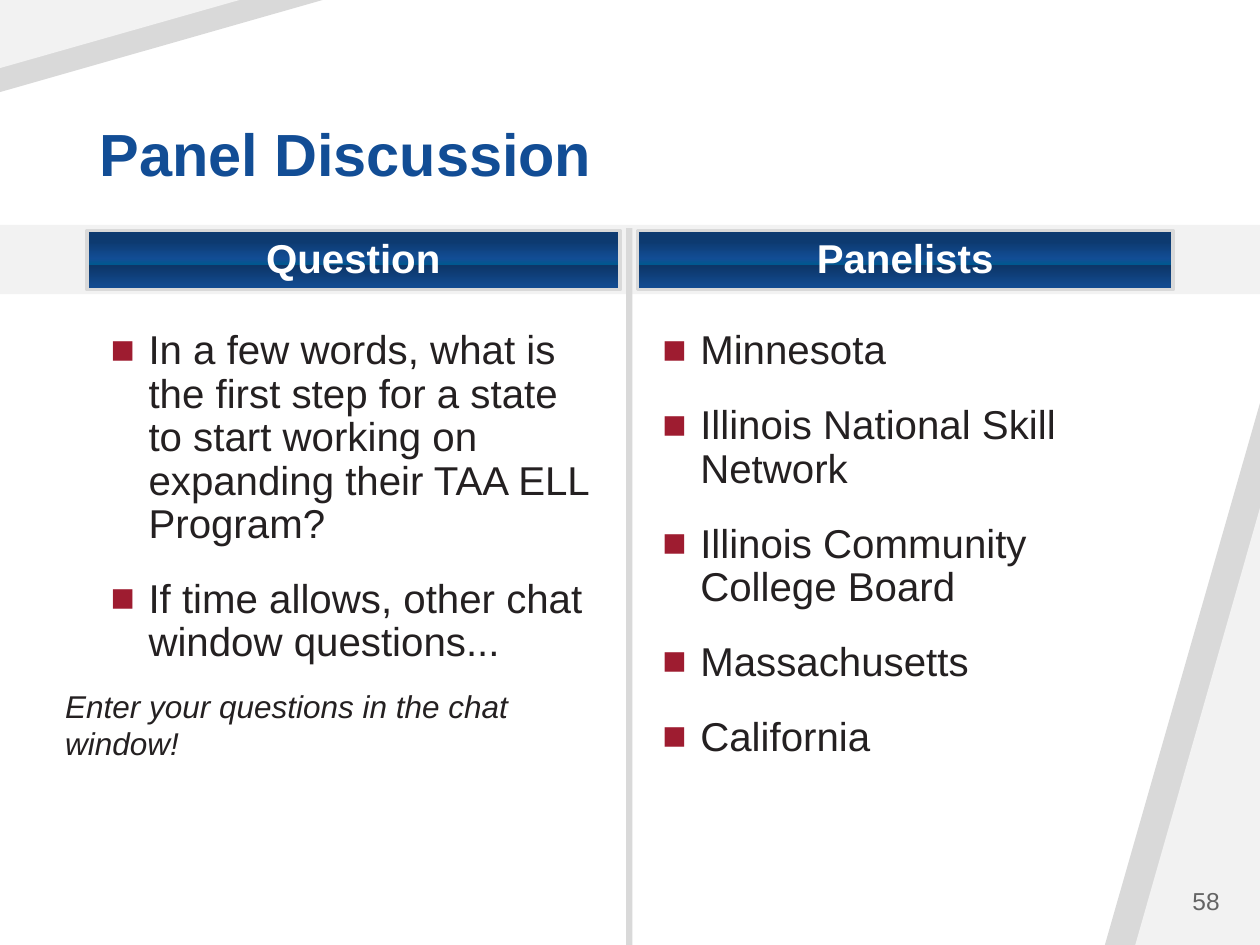
from dataclasses import dataclass
from typing import NamedTuple

from lxml import etree
from pptx import Presentation
from pptx.dml.color import RGBColor
from pptx.enum import shapes, text
from pptx.oxml import ns
from pptx.util import Pt


@dataclass(frozen=True)
class Theme:
    font: str = "Arial"
    blue: str = "124D95"
    ink: str = "242021"
    white: str = "FFFFFF"
    bullet: str = "9E1C30"
    stripe: str = "D9D9D9"
    pale: str = "F2F2F2"
    number: str = "646464"
    title_size: float = 34
    body_size: float = 23
    note_size: float = 18
    number_size: float = 14
    gradient: tuple = ((19, "0D3A70"), (47, "124D95"), (58, "00588F"),
                       (59, "0D3668"), (100, "124D95"))


class Box(NamedTuple):
    left: float
    top: float
    width: float
    height: float

    def lengths(self) -> list:
        return [Pt(value) for value in self]


class Decor(NamedTuple):
    geometry: shapes.MSO_SHAPE
    box: Box
    color: str
    rotation: float = 0


class Column(NamedTuple):
    heading: str
    heading_box: Box
    points_box: Box
    points: tuple


THEME = Theme()
TRIANGLE = shapes.MSO_SHAPE.ISOSCELES_TRIANGLE
RECTANGLE = shapes.MSO_SHAPE.RECTANGLE
INDENT = Pt(21.6)

DECORATION = (
    Decor(TRIANGLE, Box(631.4, 230.4, 88.6, 309.6), THEME.stripe),
    Decor(TRIANGLE, Box(648.7, 290.2, 71.3, 249.8), THEME.pale),
    Decor(TRIANGLE, Box(0, 0, 184.3, 52.6), THEME.stripe, 180),
    Decor(TRIANGLE, Box(0, 0, 136.8, 38.9), THEME.pale, 180),
    Decor(RECTANGLE, Box(0, 128.5, 720, 39.6), THEME.pale),
    Decor(RECTANGLE, Box(357.8, 130.3, 3.6, 409.7), THEME.stripe),
)

COLUMNS = (
    Column("Question", Box(49.7, 131.8, 304.6, 33.8), Box(56.2, 185, 295.2, 302.4), (
        "In a few words, what is the first step for a state to start working on "
        "expanding their TAA ELL Program?",
        "If time allows, other chat window questions...",
    )),
    Column("Panelists", Box(364.3, 131.8, 306, 33.8), Box(371.5, 185, 295.2, 302.4), (
        "Minnesota",
        "Illinois National Skill Network",
        "Illinois Community College Board",
        "Massachusetts",
        "California",
    )),
)


def apply(target, values: dict) -> None:
    for key, value in values.items():
        setattr(target, key, value)


def write(paragraph, words: str, size: float, color: str, **style) -> None:
    run = paragraph.add_run()
    run.text = words
    apply(run.font, {"name": THEME.font, "size": Pt(size), **style})
    run.font.color.rgb = RGBColor.from_string(color)


def add_panel(slide, geometry, box: Box):
    panel = slide.shapes.add_shape(geometry, *box.lengths())
    panel.shadow.inherit = False
    return panel


def add_decor(slide, decor: Decor) -> None:
    panel = add_panel(slide, decor.geometry, decor.box)
    panel.fill.solid()
    panel.fill.fore_color.rgb = RGBColor.from_string(decor.color)
    panel.line.fill.background()
    panel.rotation = decor.rotation
    if decor.geometry == TRIANGLE:
        panel.adjustments[0] = 1


def fill_gradient(panel) -> None:
    panel.fill.gradient()
    panel.fill.gradient_angle = 270
    stops = panel.element.spPr.find(".//" + ns.qn("a:gsLst"))
    for stop in list(stops):
        stops.remove(stop)
    for percent, color in THEME.gradient:
        stop = etree.SubElement(stops, ns.qn("a:gs"), pos=str(percent * 1000))
        etree.SubElement(stop, ns.qn("a:srgbClr"), val=color)


def add_heading(slide, heading: str, box: Box) -> None:
    panel = add_panel(slide, RECTANGLE, box)
    fill_gradient(panel)
    panel.line.color.rgb = RGBColor.from_string(THEME.stripe)
    panel.line.width = Pt(2)
    apply(panel.text_frame, {
        "word_wrap": True, "vertical_anchor": text.MSO_ANCHOR.MIDDLE,
        "margin_left": Pt(3.6), "margin_right": Pt(3.6),
        "margin_top": Pt(4.3), "margin_bottom": Pt(4.3),
    })
    paragraph = panel.text_frame.paragraphs[0]
    apply(paragraph, {"alignment": text.PP_ALIGN.CENTER, "line_spacing": 0.9})
    write(paragraph, heading, THEME.body_size, THEME.white, bold=True)


def add_text_frame(slide, box: Box):
    frame = slide.shapes.add_textbox(*box.lengths()).text_frame
    frame.word_wrap = True
    return frame


def add_bullet(paragraph) -> None:
    properties = paragraph._p.get_or_add_pPr()
    apply_indent = {"marL": INDENT, "indent": -INDENT}
    for key, value in apply_indent.items():
        properties.set(key, str(int(value)))
    color = etree.SubElement(properties, ns.qn("a:buClr"))
    etree.SubElement(color, ns.qn("a:srgbClr"), val=THEME.bullet)
    etree.SubElement(properties, ns.qn("a:buFont"), typeface=THEME.font)
    etree.SubElement(properties, ns.qn("a:buChar"), char="■")


def add_points(slide, points: tuple, box: Box) -> None:
    frame = add_text_frame(slide, box)
    for index, point in enumerate(points):
        paragraph = frame.add_paragraph() if index else frame.paragraphs[0]
        add_bullet(paragraph)
        apply(paragraph, {"line_spacing": 0.9, "space_before": Pt(18 if index else 0)})
        write(paragraph, point, THEME.body_size, THEME.ink)


def set_title(slide, words: str, box: Box) -> None:
    title = slide.shapes.title
    apply(title, dict(zip(("left", "top", "width", "height"), box.lengths())))
    apply(title.text_frame, {
        "word_wrap": True, "auto_size": text.MSO_AUTO_SIZE.NONE,
        "vertical_anchor": text.MSO_ANCHOR.BOTTOM,
    })
    paragraph = title.text_frame.paragraphs[0]
    apply(paragraph, {"alignment": text.PP_ALIGN.LEFT, "line_spacing": 0.9})
    write(paragraph, words, THEME.title_size, THEME.blue, bold=True)


def main() -> None:
    deck = Presentation()
    apply(deck, {"slide_width": Pt(720), "slide_height": Pt(540)})
    slide = deck.slides.add_slide(deck.slide_layouts[5])
    for decor in DECORATION:
        add_decor(slide, decor)
    set_title(slide, "Panel Discussion", Box(49.7, 28.8, 620.6, 82.8))
    for column in COLUMNS:
        add_heading(slide, column.heading, column.heading_box)
        add_points(slide, column.points, column.points_box)

    page = add_text_frame(slide, Box(645.1, 500.4, 59, 28.8))
    page.vertical_anchor = text.MSO_ANCHOR.MIDDLE
    page.paragraphs[0].alignment = text.PP_ALIGN.RIGHT
    write(page.paragraphs[0], "58", THEME.number_size, THEME.number)

    invitation = add_text_frame(slide, Box(30.2, 388.8, 313.9, 51.1))
    write(invitation.paragraphs[0], "Enter your questions in the chat window!",
          THEME.note_size, THEME.ink, italic=True)
    deck.save("out.pptx")


if __name__ == "__main__":
    main()
